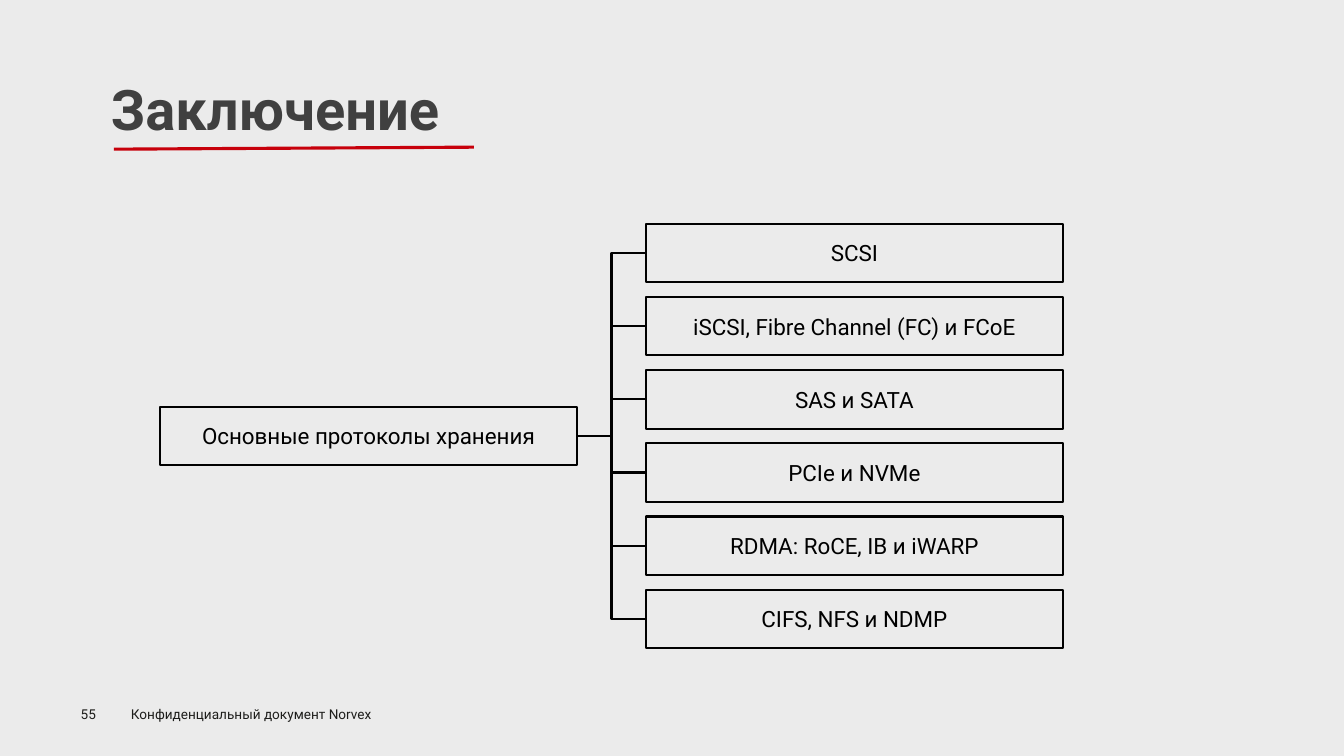
from lxml.etree import SubElement
from pptx import Presentation
from pptx.dml.color import RGBColor
from pptx.enum.shapes import MSO_CONNECTOR, MSO_SHAPE
from pptx.enum.text import MSO_ANCHOR, PP_ALIGN
from pptx.oxml.ns import qn
from pptx.util import Pt

PX = 9144
BACK = RGBColor(0xEB, 0xEB, 0xEB)
RED = RGBColor(0xC7, 0x00, 0x0B)
GREY = RGBColor(0x40, 0x40, 0x40)
INK = RGBColor(0x1D, 0x1D, 0x1B)
BLACK = RGBColor(0, 0, 0)
RIGHT, LEFT = 3, 1

ROOT = "Основные протоколы хранения"
LEAVES = [
    "SCSI",
    "iSCSI, Fibre Channel (FC) и FCoE",
    "SAS и SATA",
    "PCIe и NVMe",
    "RDMA: RoCE, IB и iWARP",
    "CIFS, NFS и NDMP",
]


def scale(*sizes):
    """Turn px lengths into EMU."""
    return [round(size * PX) for size in sizes]


def write(shape, text, size, color, bold=False, align=PP_ALIGN.LEFT,
          anchor=MSO_ANCHOR.TOP, wrap=True, pad=(10, 5)):
    """Put one formatted paragraph into a shape."""
    frame = shape.text_frame
    frame.word_wrap = wrap
    frame.vertical_anchor = anchor
    side, edge = scale(*pad)
    frame.margin_left = frame.margin_right = side
    frame.margin_top = frame.margin_bottom = edge
    para = frame.paragraphs[0]
    para.alignment = align
    run = para.add_run()
    run.text = text
    font = run.font
    font.name, font.size, font.bold = "Roboto", Pt(size), bold
    font.color.rgb = color


def label(slide, box, text, size, color, **style):
    """Add a text box."""
    write(slide.shapes.add_textbox(*scale(*box)), text, size, color, **style)


def link(slide, kind, ends, color, width):
    """Add a connector without a shadow."""
    line = slide.shapes.add_connector(kind, *scale(*ends))
    line.line.color.rgb = color
    line.line.width = Pt(width)
    SubElement(line._element.spPr, qn("a:effectLst"))
    return line


def node(slide, box, text):
    """Add an outlined box of the tree."""
    shape = slide.shapes.add_shape(MSO_SHAPE.RECTANGLE, *scale(*box))
    shape.shadow.inherit = False
    shape.fill.background()
    shape.line.color.rgb = BLACK
    shape.line.width = Pt(1.5)
    write(shape, text, 16, BLACK, align=PP_ALIGN.CENTER,
          anchor=MSO_ANCHOR.MIDDLE, pad=(21, 0))
    return shape


def header(slide, box):
    """Draw the title and its red rule."""
    x, y, w, h = box
    label(slide, box, "Заключение", 40, GREY, bold=True, wrap=False)
    link(slide, MSO_CONNECTOR.STRAIGHT,
         (x + w - 31, y + h, x + 13, y + h + 2), RED, 2.25)


def tree(slide, box, wide=413, high=58):
    """Draw the root, the column of leaves and the links between them."""
    x, y, w, h = box
    root = node(slide, (x, y + (h - high) / 2, wide, high), ROOT)
    step = (h - high) / (len(LEAVES) - 1)
    for row, text in enumerate(LEAVES):
        leaf = node(slide, (x + w - wide, y + row * step, wide, high), text)
        line = link(slide, MSO_CONNECTOR.ELBOW, (0, 0, 0, 0), BLACK, 1.5)
        line.begin_connect(root, RIGHT)
        line.end_connect(leaf, LEFT)


def footer(slide, box):
    """Write the page number and the notice."""
    x, y, w, h = box
    label(slide, (x + 40, y, w - 40, h), "Конфиденциальный документ Norvex",
          9.7, INK)
    label(slide, (x, y + 5, 55, 16), "55", 9.7, INK, pad=(0, 0))


def main():
    """Build and save the slide."""
    deck = Presentation()
    deck.slide_width, deck.slide_height = scale(1333, 750)
    slide = deck.slides.add_slide(deck.slide_layouts[6])
    fill = slide.background.fill
    fill.solid()
    fill.fore_color.rgb = BACK
    header(slide, (100, 69, 401, 77))
    tree(slide, (159, 222, 895, 421))
    footer(slide, (80, 695, 334, 26))
    deck.save("out.pptx")


if __name__ == "__main__":
    main()
